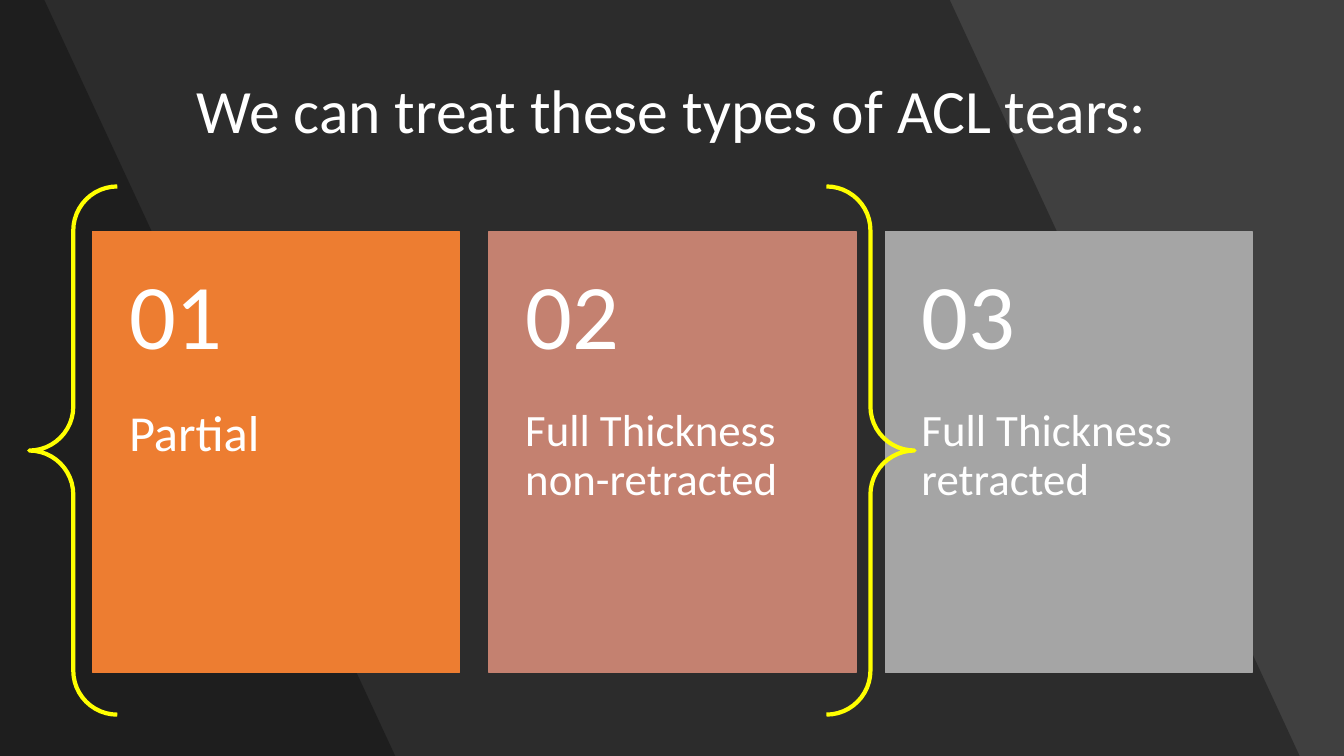
"""Build a slide showing the types of ACL tears that can be treated."""
import pptx
import pptx.dml.color
import pptx.enum.shapes
import pptx.enum.text
import pptx.oxml
import pptx.oxml.ns
import pptx.util

Inches = pptx.util.Inches
RGB = pptx.dml.color.RGBColor.from_string
SHAPE = pptx.enum.shapes.MSO_SHAPE
ANCHOR = pptx.enum.text.MSO_ANCHOR
ALIGN = pptx.enum.text.PP_ALIGN

COLORS = {
    "background": "404040",
    "shade": "000000",
    "text": "FFFFFF",
    "partial": "ED7D31",
    "non_retracted": "C48170",
    "retracted": "A5A5A5",
    "brace": "FFFF00",
}


def add_text(slide, text, box, size, anchor, insets, align=ALIGN.LEFT):
    label = slide.shapes.add_textbox(*[Inches(v) for v in box])
    frame = label.text_frame
    frame.word_wrap = True
    frame.vertical_anchor = anchor
    frame.margin_left, frame.margin_top, frame.margin_right, frame.margin_bottom = [
        Inches(v) for v in insets
    ]
    paragraph = frame.paragraphs[0]
    paragraph.text = text
    paragraph.alignment = align
    paragraph.line_spacing = 0.9
    paragraph.font.name = "Calibri"
    paragraph.font.size = pptx.util.Pt(size)
    paragraph.font.color.rgb = RGB(COLORS["text"])


deck = pptx.Presentation()
deck.slide_width = Inches(13.33)
deck.slide_height = Inches(7.5)
slide = deck.slides.add_slide(deck.slide_layouts[6])
slide.background.fill.solid()
slide.background.fill.fore_color.rgb = RGB(COLORS["background"])

for top_right, bottom_right in [(9.42, 12.89), (0.44, 3.92)]:
    outline = slide.shapes.build_freeform(0, 0)
    outline.add_line_segments([
        (Inches(top_right), 0),
        (Inches(bottom_right), Inches(7.5)),
        (0, Inches(7.5)),
    ])
    shade = outline.convert_to_shape()
    shade.shadow.inherit = False
    shade.fill.solid()
    shade.fill.fore_color.rgb = RGB(COLORS["shade"])
    shade.line.fill.background()
    shade_color = shade.fill._xPr.find(".//" + pptx.oxml.ns.qn("a:srgbClr"))
    shade_color.append(pptx.oxml.parse_xml(
        f'<a:alpha {pptx.oxml.ns.nsdecls("a")} val="30000"/>'
    ))

add_text(slide, "We can treat these types of ACL tears:", (0.91, 0.4, 11.51, 1.45),
         44, ANCHOR.MIDDLE, (0.1, 0.05, 0.1, 0.05), ALIGN.CENTER)

card_left, card_top, card_pitch = 0.92, 2.3, 3.93
card_width, card_height, number_height = 3.64, 4.37, 1.75
tears = [
    ("Partial", 36, "partial"),
    ("Full Thickness non-retracted", 32, "non_retracted"),
    ("Full Thickness retracted", 32, "retracted"),
]
for index, (tear, size, color) in enumerate(tears):
    left = card_left + index * card_pitch
    card = slide.shapes.add_shape(SHAPE.RECTANGLE, Inches(left), Inches(card_top),
                                  Inches(card_width), Inches(card_height))
    card.shadow.inherit = False
    card.fill.solid()
    card.fill.fore_color.rgb = RGB(COLORS[color])
    card.line.color.rgb = RGB(COLORS[color])
    card.line.width = pptx.util.Pt(1)
    add_text(slide, tear,
             (left, card_top + number_height, card_width, card_height - number_height),
             size, ANCHOR.TOP, (0.36, 0, 0.36, 0.36))
    add_text(slide, f"{index + 1:02}", (left, card_top, card_width, number_height),
             66, ANCHOR.MIDDLE, (0.36, 0.18, 0.36, 0.18))

treatable_brace = slide.shapes.add_shape(SHAPE.DOUBLE_BRACE, Inches(0.29), Inches(1.85),
                                         Inches(8.78), Inches(5.24))
treatable_brace.shadow.inherit = False
treatable_brace.fill.background()
treatable_brace.line.color.rgb = RGB(COLORS["brace"])
treatable_brace.line.width = pptx.util.Pt(3)

deck.save("out.pptx")
